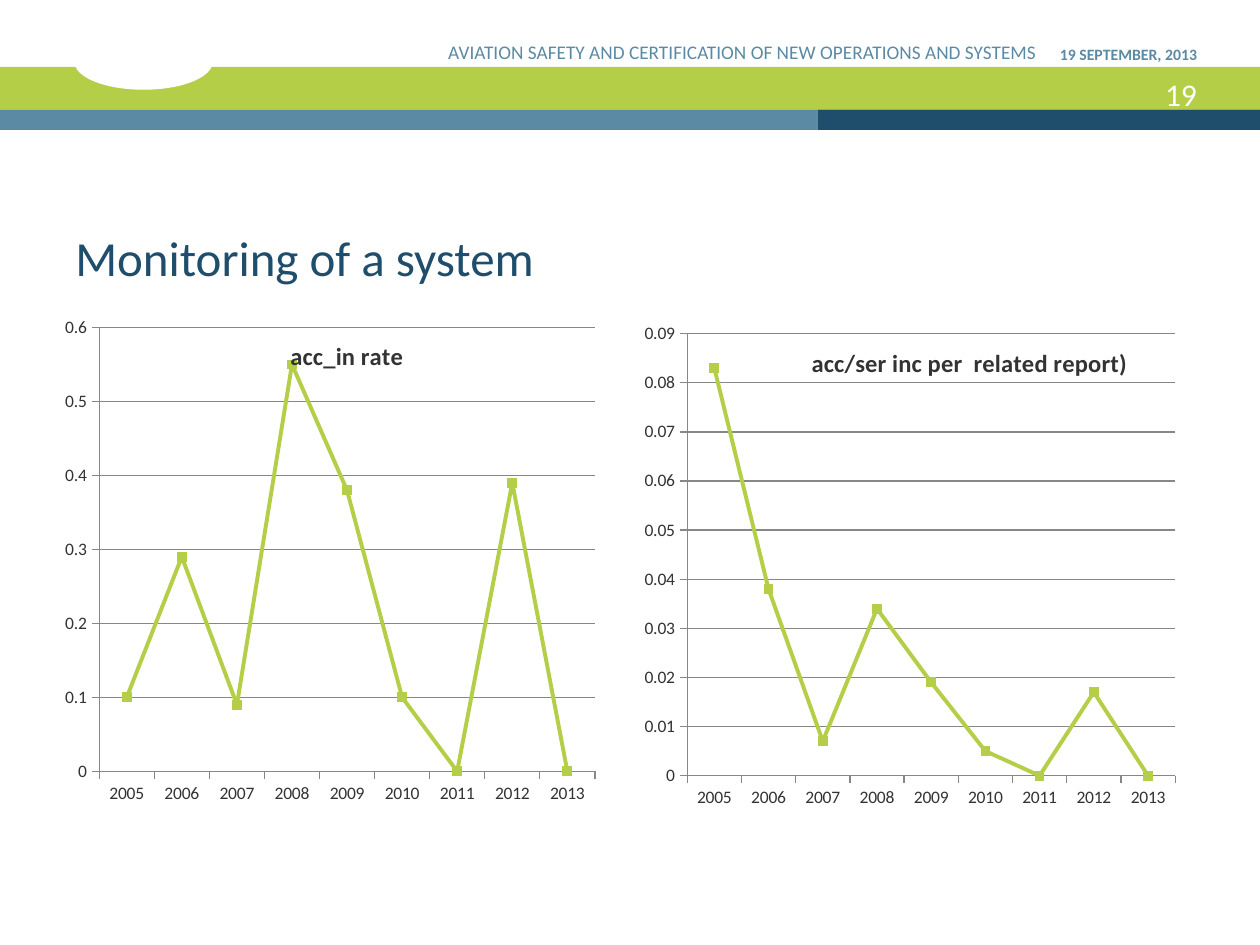
from lxml import etree
from pptx import Presentation
from pptx.chart.data import CategoryChartData
from pptx.dml.color import RGBColor
from pptx.enum.chart import XL_CHART_TYPE as ChartType, XL_TICK_MARK as TickMark
from pptx.enum.shapes import MSO_SHAPE as Shape
from pptx.enum.text import MSO_ANCHOR as Anchor, PP_ALIGN as Align
from pptx.oxml.ns import qn
from pptx.util import Cm, Pt

COLORS = {
    name: RGBColor.from_string(value)
    for name, value in {
        "lime": "B5CE48",
        "navy": "1E4E6B",
        "steel": "5B8AA5",
        "white": "FFFFFF",
        "text": "333333",
        "axis": "878787",
    }.items()
}
FONT = "Calibri"


def style_font(font, size, color, bold=False):
    font.name = FONT
    font.size = Pt(size)
    font.bold = bold
    font.color.rgb = COLORS[color]


def set_layout(parent, index, **settings):
    for old in parent.findall(qn("c:layout")):
        parent.remove(old)
    layout = etree.Element(qn("c:layout"))
    manual = etree.SubElement(layout, qn("c:manualLayout"))
    for tag, value in settings.items():
        etree.SubElement(manual, qn(f"c:{tag}")).set("val", str(value))
    parent.insert(index, layout)


deck = Presentation()
deck.slide_width, deck.slide_height = Cm(25.4), Cm(19.05)
page = deck.slides.add_slide(deck.slide_layouts[6])

for preset, color, *bounds in [
    (Shape.RECTANGLE, "lime", 0, 1.35, 25.4, 0.86),
    (Shape.RECTANGLE, "navy", 16.48, 2.21, 8.92, 0.41),
    (Shape.RECTANGLE, "steel", 0, 2.21, 16.48, 0.41),
    (Shape.OVAL, "white", 1.5, 0.69, 2.79, 1.12),
]:
    band = page.shapes.add_shape(preset, *map(Cm, bounds))
    band.shadow.inherit = False
    band.fill.solid()
    band.fill.fore_color.rgb = COLORS[color]
    band.line.fill.background()

for text, size, color, bold, align, *bounds in [
    ("Monitoring of a system", 28, "navy", False, Align.LEFT, 1.27, 2.92, 22.86, 2.97),
    ("19", 18, "white", False, Align.RIGHT, 22.02, 1.37, 2.11, 1.02),
    ("19 SEPTEMBER, 2013", 9, "steel", True, Align.RIGHT, 20.9, 0.13, 3.23, 1.27),
    ("AVIATION SAFETY AND CERTIFICATION OF NEW OPERATIONS AND SYSTEMS",
     11, "steel", False, Align.RIGHT, 7.49, 0.13, 13.41, 1.27),
]:
    frame = page.shapes.add_textbox(*map(Cm, bounds)).text_frame
    frame.word_wrap = True
    frame.vertical_anchor = Anchor.BOTTOM
    if align == Align.RIGHT:
        frame.margin_right = 0
    frame.text = text
    para = frame.paragraphs[0]
    para.alignment = align
    style_font(para.runs[0].font, size, color, bold)

years = [str(year) for year in range(2005, 2014)]
for left, title, series_name, values, top_value, step, title_spot, plot_area in [
    (1.27, "acc_in rate", "acc_in rate",
     [0.1, 0.29, 0.09, 0.55, 0.38, 0.1, 0, 0.39, 0],
     0.6, 0.1, (0.4, 0.04), (0.065, 0.028, 0.89, 0.712)),
    (12.9, "acc/ser inc per  related report)", "Series 1",
     [0.083, 0.038, 0.007, 0.034, 0.019, 0.005, 0, 0.017, 0],
     0.09, 0.01, (0.3, 0.05), (0.085, 0.038, 0.876, 0.709)),
]:
    data = CategoryChartData()
    data.categories = years
    data.add_series(series_name, values)
    chart = page.shapes.add_chart(
        ChartType.LINE, Cm(left), Cm(6.25), Cm(11.23), Cm(12.57), data
    ).chart
    chart.has_legend = False
    style_font(chart.font, 10, "text")

    heading = chart.chart_title
    heading.text_frame.text = title
    style_font(heading.text_frame.paragraphs[0].runs[0].font, 14, "text", True)
    x, y = title_spot
    set_layout(heading.element, 1, xMode="edge", yMode="edge", x=x, y=y)
    heading.element.find(qn("c:overlay")).set("val", "1")

    x, y, w, h = plot_area
    set_layout(chart.element.find(f".//{qn('c:plotArea')}"), 0, layoutTarget="inner",
               xMode="edge", yMode="edge", x=x, y=y, w=w, h=h)

    chart.value_axis.minimum_scale = 0
    chart.value_axis.maximum_scale = top_value
    chart.value_axis.major_unit = step
    chart.value_axis.has_major_gridlines = True
    chart.value_axis.tick_labels.number_format = "General"
    chart.value_axis.tick_labels.number_format_is_linked = False
    for axis in (chart.category_axis, chart.value_axis):
        axis.major_tick_mark = TickMark.OUTSIDE
        axis.minor_tick_mark = TickMark.NONE
    for rule in (chart.category_axis, chart.value_axis, chart.value_axis.major_gridlines):
        rule.format.line.color.rgb = COLORS["axis"]
        rule.format.line.width = Pt(0.75)

    plot = chart.plots[0]
    plot.vary_by_categories = False
    series = plot.series[0]
    series.smooth = False
    series.marker.style = None
    series.format.line.color.rgb = COLORS["lime"]
    series.format.line.width = Pt(2.25)

deck.save("out.pptx")
